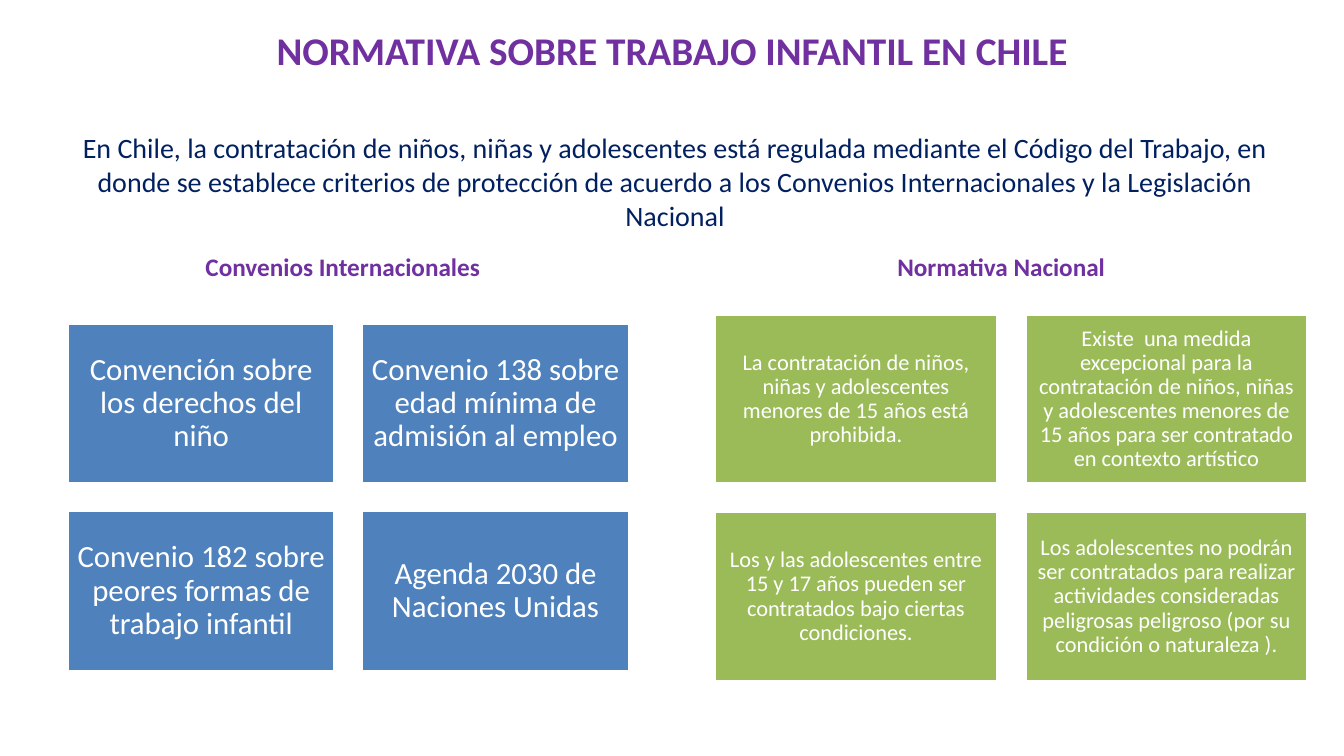
from pptx import Presentation
from pptx.dml.color import RGBColor
from pptx.enum.shapes import MSO_SHAPE
from pptx.enum.text import MSO_ANCHOR, MSO_AUTO_SIZE, PP_ALIGN
from pptx.util import Inches, Pt

PURPLE = RGBColor(0x70, 0x30, 0xA0)
NAVY = RGBColor(0x00, 0x20, 0x60)
BLUE = RGBColor(0x4F, 0x81, 0xBD)
GREEN = RGBColor(0x9B, 0xBB, 0x59)
WHITE = RGBColor(0xFF, 0xFF, 0xFF)

TITLE = "NORMATIVA SOBRE TRABAJO INFANTIL EN CHILE"
INTRO = (
    "En Chile, la contratación de niños, niñas y adolescentes está regulada "
    "mediante el Código del Trabajo, en donde se establece criterios de "
    "protección de acuerdo a los Convenios Internacionales y la Legislación Nacional"
)
CONVENIOS = [
    "Convención sobre los derechos del niño",
    "Convenio 138 sobre edad mínima de admisión al empleo",
    "Convenio 182 sobre peores formas de trabajo infantil",
    "Agenda 2030 de Naciones Unidas",
]
NORMATIVA = [
    "La contratación de niños, niñas y adolescentes menores de 15 años está prohibida.",
    "Existe  una medida excepcional para la contratación de niños, niñas y "
    "adolescentes menores de 15 años para ser contratado en contexto artístico",
    "Los y las adolescentes entre 15 y 17 años pueden ser contratados bajo "
    "ciertas condiciones.",
    "Los adolescentes no podrán ser contratados para realizar actividades "
    "consideradas peligrosas peligroso (por su condición o naturaleza ).",
]
COLUMNS = 2


def set_attributes(target, formats):
    """Set every format value on the target object."""
    for name, value in formats.items():
        setattr(target, name, value)


def place(sp, box):
    """Move and size a shape to a box given in inches."""
    set_attributes(sp, dict(zip(("left", "top", "width", "height"), map(Inches, box))))


def write(sp, text, size, color, bold=False, anchor=MSO_ANCHOR.TOP, spacing=1.0):
    """Fill a shape with one centred paragraph."""
    tf = sp.text_frame
    set_attributes(tf, {"text": text, "word_wrap": True,
                        "auto_size": MSO_AUTO_SIZE.NONE, "vertical_anchor": anchor})
    p = tf.paragraphs[0]
    set_attributes(p, {"alignment": PP_ALIGN.CENTER, "line_spacing": spacing,
                       "space_before": Pt(0)})
    r = p.runs[0]
    set_attributes(r.font, {"name": "Calibri", "size": Pt(size), "bold": bold})
    r.font.color.rgb = color


def add_header(slide, box):
    """Place the title and the introduction in the upper box."""
    left, top, width, height = box
    title = slide.shapes.title
    place(title, (left, top, width, 0.57))
    write(title, TITLE, 28, PURPLE, bold=True)
    intro_height, margin = 1.11, 0.72
    intro = slide.shapes.add_textbox(0, 0, 0, 0)
    place(intro, (left + margin, top + height - intro_height, 11.95, intro_height))
    write(intro, INTRO, 20, NAVY)


def add_heading(sp, text, box):
    """Place a section heading in its placeholder."""
    place(sp, box)
    write(sp, text, 18, PURPLE, bold=True)


def add_tiles(slide, texts, box, gap, fill, size, inset):
    """Spread text tiles over a two-column grid that fills the box."""
    left, top, width, height = box
    rows = len(texts) // COLUMNS
    tile_w = (width - gap * (COLUMNS - 1)) / COLUMNS
    tile_h = (height - gap * (rows - 1)) / rows
    for i, text in enumerate(texts):
        row, col = divmod(i, COLUMNS)
        sp = slide.shapes.add_shape(MSO_SHAPE.RECTANGLE, 0, 0, 0, 0)
        place(sp, (left + col * (tile_w + gap), top + row * (tile_h + gap), tile_w, tile_h))
        sp.shadow.inherit = False
        sp.fill.solid()
        sp.fill.fore_color.rgb = fill
        sp.line.color.rgb = WHITE
        sp.line.width = Pt(2)
        sides = ("margin_left", "margin_top", "margin_right", "margin_bottom")
        set_attributes(sp.text_frame, dict.fromkeys(sides, Inches(inset)))
        write(sp, text, size, WHITE, anchor=MSO_ANCHOR.MIDDLE, spacing=0.9)


def main():
    """Build and save the slide."""
    prs = Presentation()
    set_attributes(prs, {"slide_width": Inches(13.33), "slide_height": Inches(7.5)})
    slide = prs.slides.add_slide(prs.slide_layouts.get_by_name("Comparison"))
    _, left_head, left_body, right_head, right_body = list(slide.placeholders)[:5]
    for sp in (left_body, right_body):
        sp.element.getparent().remove(sp.element)

    add_header(slide, (0, 0.21, 13.33, 2.15))
    add_heading(left_head, "Convenios Internacionales", (0.67, 2.44, 5.46, 0.4))
    add_heading(right_head, "Normativa Nacional", (7.2, 2.44, 5.46, 0.4))
    add_tiles(slide, CONVENIOS, (0.67, 3.21, 5.57, 3.45), 0.27, BLUE, 22, 0.09)
    add_tiles(slide, NORMATIVA, (7.09, 3.12, 5.88, 3.64), 0.28, GREEN, 16, 0.07)
    prs.save("out.pptx")


if __name__ == "__main__":
    main()
